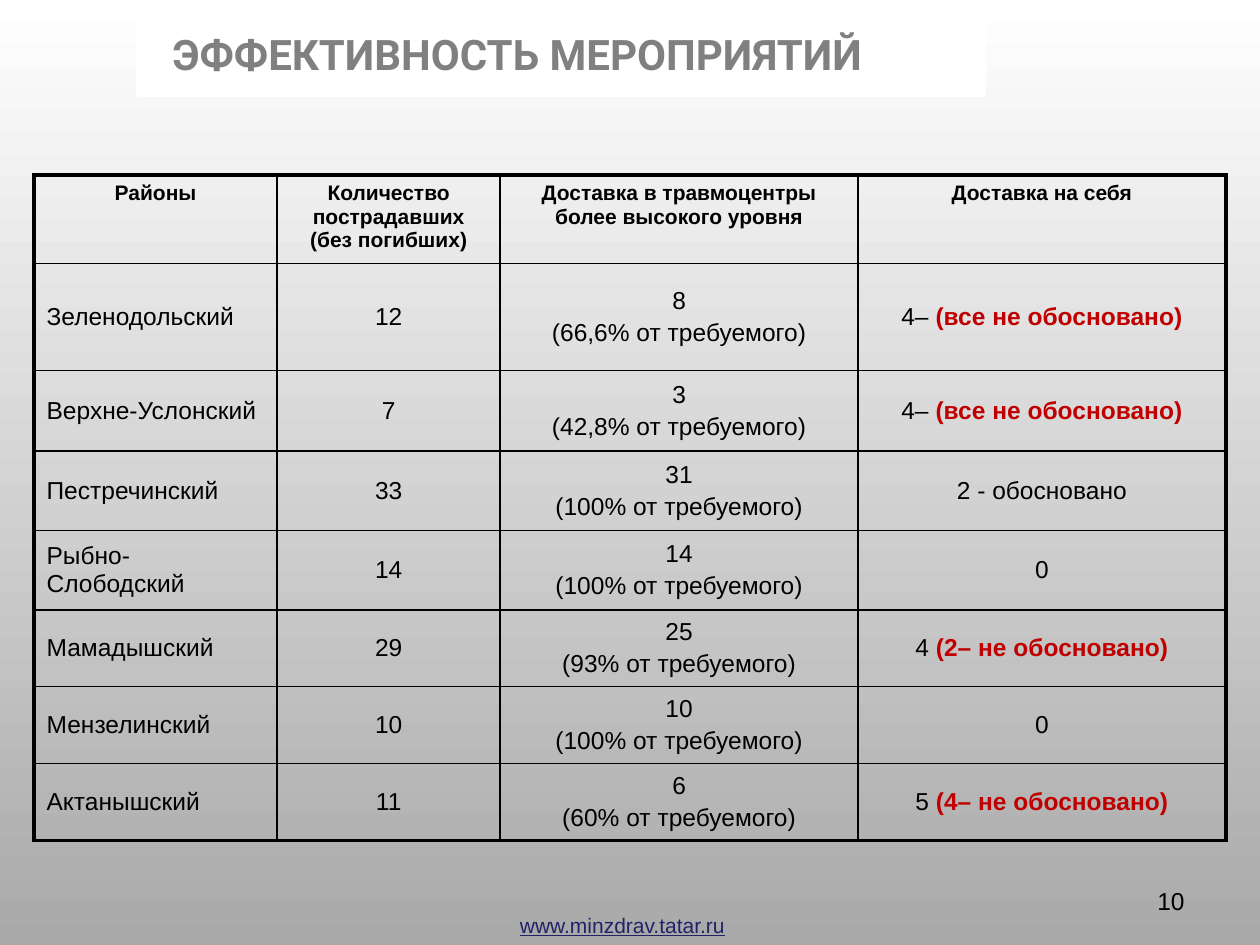
import pptx
import pptx.util
import pptx.dml.color
import pptx.enum.shapes
import pptx.enum.text
import pptx.oxml

Inches = pptx.util.Inches
Pt = pptx.util.Pt
ALIGN = pptx.enum.text.PP_ALIGN
ANCHOR = pptx.enum.text.MSO_ANCHOR

HEADING = "ЭФФЕКТИВНОСТЬ МЕРОПРИЯТИЙ"
SITE = "www.minzdrav.tatar.ru"
PAGE = "10"
HEADERS = [
    "Районы",
    "Количество пострадавших (без погибших)",
    "Доставка в травмоцентры более высокого уровня",
    "Доставка на себя",
]
DISTRICTS = [
    ("Зеленодольский", "12", "8", "66,6%", "4– ", "(все не обосновано)"),
    ("Верхне-Услонский", "7", "3", "42,8%", "4– ", "(все не обосновано)"),
    ("Пестречинский", "33", "31", "100%", "2 - обосновано", ""),
    ("Рыбно-Слободский", "14", "14", "100%", "0", ""),
    ("Мамадышский", "29", "25", "93%", "4 ", "(2– не обосновано)"),
    ("Мензелинский", "10", "10", "100%", "0", ""),
    ("Актанышский", "11", "6", "60%", "5 ", "(4– не обосновано)"),
]
COLUMN_WIDTHS = [1.93, 1.77, 2.84, 2.92]
ROW_HEIGHTS = [0.7, 0.85, 0.64, 0.63, 0.63, 0.61, 0.61, 0.61]

THEME = {
    "sky": "FFFFFF",
    "ground": "A9A9A9",
    "border": "000000",
    "inner": 1,
    "outer": 2.25,
    "heading": {"name": "Roboto", "size": 24, "bold": True, "color": "808080"},
    "header": {"name": "Arial", "size": 12, "bold": True, "color": "000000"},
    "body": {"name": "Arial", "size": 14, "bold": False, "color": "000000"},
    "alert": {"name": "Arial", "size": 14, "bold": True, "color": "C00000"},
    "site": {"name": "Arial", "size": 12, "underline": True, "color": "222268"},
}


def rgb(color):
    return pptx.dml.color.RGBColor.from_string(color)


def add_run(paragraph, text, style):
    run = paragraph.add_run()
    run.text = text
    for key, value in THEME[style].items():
        if key == "color":
            run.font.color.rgb = rgb(value)
        else:
            setattr(run.font, key, Pt(value) if key == "size" else value)


def write(frame, lines, align):
    for index, line in enumerate(lines):
        paragraph = frame.add_paragraph() if index else frame.paragraphs[0]
        paragraph.alignment = align
        paragraph.space_before = Pt(2.8 if index else 0)
        for text, style in line:
            add_run(paragraph, text, style)


def set_borders(cell, widths):
    properties = cell._tc.get_or_add_tcPr()
    for side, width in widths.items():
        properties.append(pptx.oxml.parse_xml(
            '<a:ln%s xmlns:a="http://schemas.openxmlformats.org/drawingml/2006/main" w="%d">'
            '<a:solidFill><a:srgbClr val="%s"/></a:solidFill></a:ln%s>'
            % (side, Pt(width), THEME["border"], side)))


def add_label(slide, text, style, align, box, wrap):
    label = slide.shapes.add_textbox(*map(Inches, box))
    label.text_frame.word_wrap = wrap
    write(label.text_frame, [[(text, style)]], align)


def add_districts(slide):
    grid = [[[[(header, "header")]] for header in HEADERS]]
    for district, injured, moved, share, kept, verdict in DISTRICTS:
        kept_line = [(kept, "body")] + ([(verdict, "alert")] if verdict else [])
        grid.append([
            [[(district, "body")]],
            [[(injured, "body")]],
            [[(moved, "body")], [(f"({share} от требуемого)", "body")]],
            [kept_line],
        ])
    table = slide.shapes.add_table(
        len(grid), len(HEADERS), Inches(0.27), Inches(1.39),
        Inches(sum(COLUMN_WIDTHS)), Inches(sum(ROW_HEIGHTS))).table
    table.first_row = True
    table.horz_banding = False
    for column, width in zip(table.columns, COLUMN_WIDTHS):
        column.width = Inches(width)
    for row, height in zip(table.rows, ROW_HEIGHTS):
        row.height = Inches(height)
    inner, outer = THEME["inner"], THEME["outer"]
    last_row, last_column = len(grid) - 1, len(HEADERS) - 1
    for r, row_lines in enumerate(grid):
        for c, lines in enumerate(row_lines):
            cell = table.cell(r, c)
            set_borders(cell, {
                "L": outer if c == 0 else inner,
                "R": outer if c == last_column else inner,
                "T": outer if r == 0 else inner,
                "B": outer if r == last_row else inner,
            })
            cell.fill.background()
            cell.vertical_anchor = ANCHOR.MIDDLE if r else ANCHOR.TOP
            write(cell.text_frame, lines, ALIGN.LEFT if r and c == 0 else ALIGN.CENTER)


def add_heading(slide):
    band = slide.shapes.add_shape(
        pptx.enum.shapes.MSO_SHAPE.RECTANGLE, *map(Inches, (1.09, 0.16, 6.72, 0.6)))
    band.shadow.inherit = False
    band.fill.solid()
    band.fill.fore_color.rgb = rgb(THEME["sky"])
    band.line.color.rgb = rgb(THEME["sky"])
    band.line.width = Pt(2)
    title = slide.shapes.title
    band._element.addnext(title._element)
    for side, length in zip(("left", "top", "width", "height"), (1.04, 0.17, 6.13, 0.51)):
        setattr(title, side, Inches(length))
    frame = title.text_frame
    frame.auto_size = pptx.enum.text.MSO_AUTO_SIZE.NONE
    frame.word_wrap = False
    frame.vertical_anchor = ANCHOR.MIDDLE
    write(frame, [[(HEADING, "heading")]], ALIGN.CENTER)


def main():
    deck = pptx.Presentation()
    deck.slide_width, deck.slide_height = Inches(10), Inches(7.5)
    slide = deck.slides.add_slide(deck.slide_layouts[5])
    backdrop = slide.background.fill
    backdrop.gradient()
    backdrop.gradient_angle = 270
    for stop, color in zip(backdrop.gradient_stops, ("sky", "ground")):
        stop.color.rgb = rgb(THEME[color])
    add_label(slide, SITE, "site", ALIGN.CENTER, (4.02, 7.19, 1.84, 0.3), False)
    add_heading(slide)
    add_districts(slide)
    add_label(slide, PAGE, "body", ALIGN.RIGHT, (8.98, 6.98, 0.52, 0.52), True)
    deck.save("out.pptx")


if __name__ == "__main__":
    main()
